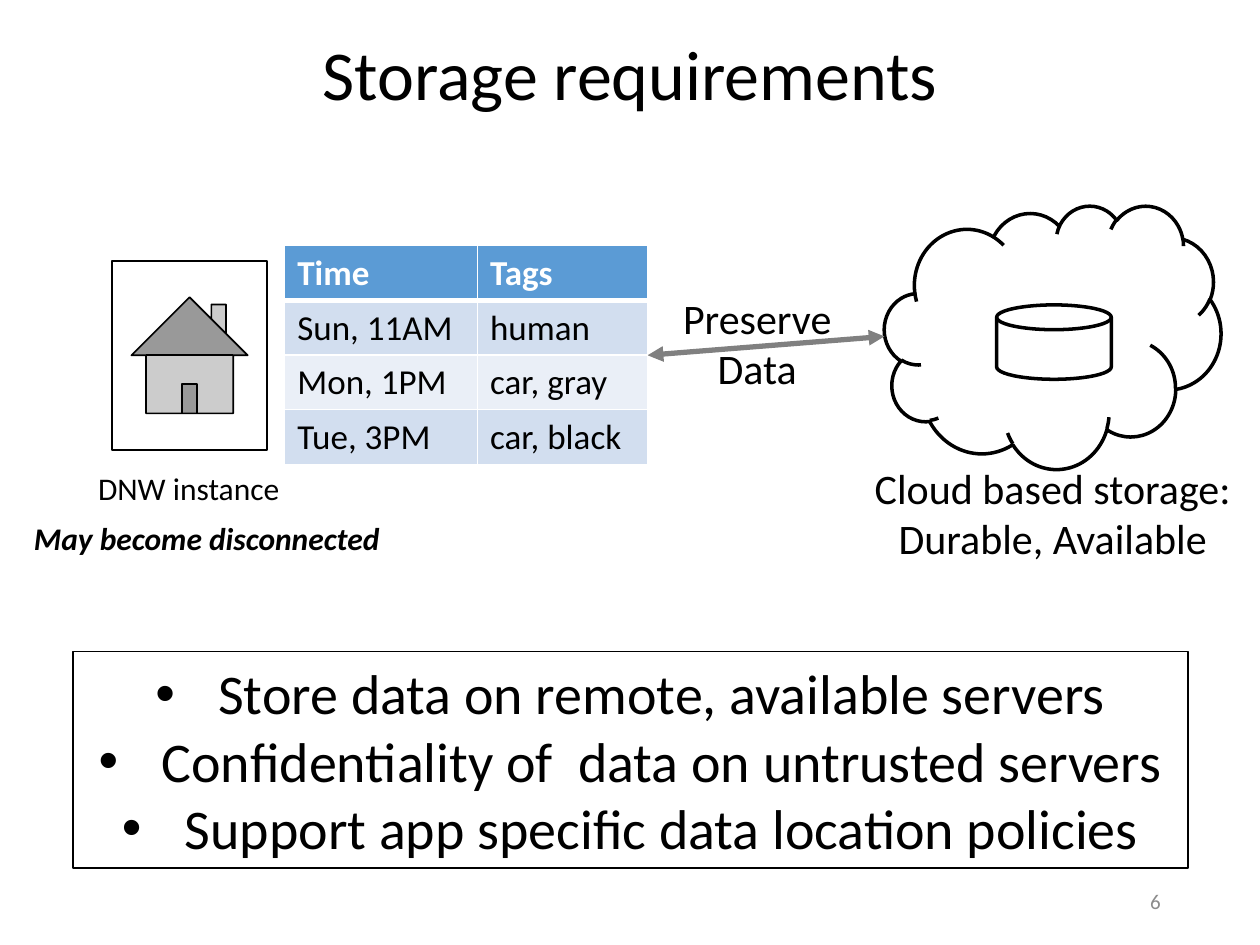
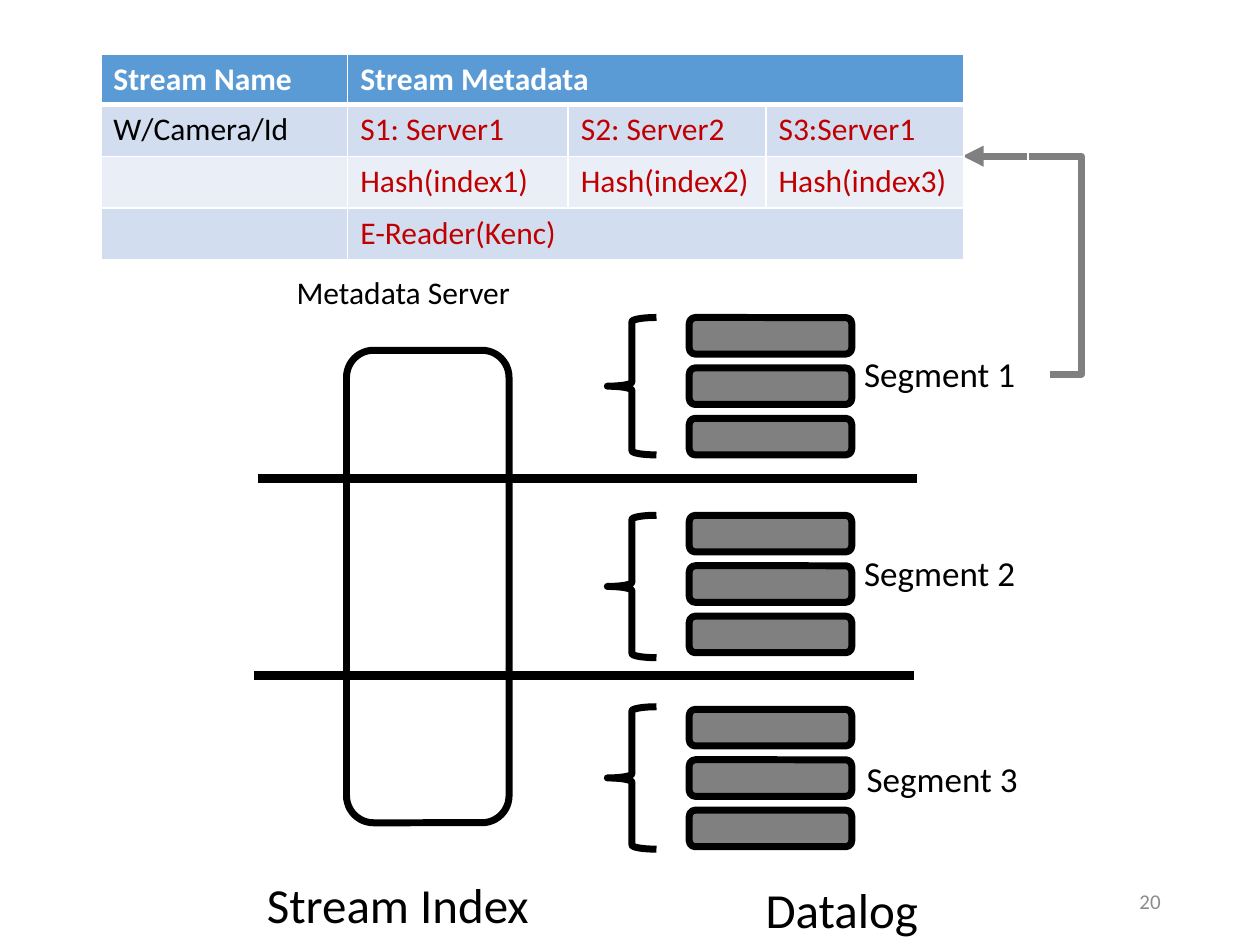
from dataclasses import dataclass

from lxml import etree
from pptx import Presentation
from pptx.dml.color import RGBColor
from pptx.enum.shapes import MSO_CONNECTOR, MSO_SHAPE
from pptx.enum.text import MSO_ANCHOR, MSO_AUTO_SIZE, PP_ALIGN
from pptx.oxml.ns import qn
from pptx.shapes.connector import Connector
from pptx.util import Inches, Pt

LEFT, CENTER, RIGHT = PP_ALIGN.LEFT, PP_ALIGN.CENTER, PP_ALIGN.RIGHT
TOP, MIDDLE = MSO_ANCHOR.TOP, MSO_ANCHOR.MIDDLE
STRAIGHT, ELBOW = MSO_CONNECTOR.STRAIGHT, MSO_CONNECTOR.ELBOW
HOME, CLOUD = MSO_SHAPE.ACTION_BUTTON_HOME, MSO_SHAPE.CLOUD
DISK, RECT = MSO_SHAPE.FLOWCHART_MAGNETIC_DISK, MSO_SHAPE.RECTANGLE
ROUNDED, BRACE = MSO_SHAPE.ROUNDED_RECTANGLE, MSO_SHAPE.LEFT_BRACE
GROW = MSO_AUTO_SIZE.SHAPE_TO_FIT_TEXT


@dataclass(frozen=True)
class Theme:
    font: str = "Calibri"
    black: str = "000000"
    white: str = "FFFFFF"
    gray: str = "808080"
    page_gray: str = "8C8C8C"
    red: str = "C00000"
    header: str = "5B9BD5"
    bands: tuple = ("D2DEEF", "EAEFF7")
    title: int = 40
    requirement: int = 32
    caption: int = 28
    label: int = 24
    body: int = 20
    small: int = 18
    page: int = 12


theme = Theme()


def write_text(frame, text, size=theme.small, color=theme.black, bold=False,
               italic=False, align=LEFT, anchor=TOP, spacing=None,
               bullet=None, grow=True):
    """Fill a text frame, one paragraph for each line of text."""
    frame.word_wrap = True
    frame.vertical_anchor = anchor
    if grow:
        frame.auto_size = GROW
    for number, line in enumerate(text.split("\n")):
        paragraph = frame.add_paragraph() if number else frame.paragraphs[0]
        paragraph.alignment = align
        if spacing:
            paragraph.line_spacing = spacing
        if bullet:
            properties = paragraph._p.get_or_add_pPr()
            properties.set("marL", str(Inches(0.5)))
            properties.set("indent", str(Inches(-0.5)))
            etree.SubElement(properties, qn("a:buFont")).set("typeface", "Arial")
            etree.SubElement(properties, qn("a:buChar")).set("char", bullet)
        run = paragraph.add_run()
        run.text = line
        font = run.font
        font.name, font.size = theme.font, Pt(size)
        font.bold, font.italic = bold, italic
        font.color.rgb = RGBColor.from_string(color)


def style(item, width, color=theme.black, fill=None, arrows=()):
    """Set outline, fill and arrowheads of a shape or connector, without shadow."""
    item.line.width = Pt(width)
    item.line.color.rgb = RGBColor.from_string(color)
    for end in arrows:
        etree.SubElement(item.line._get_or_add_ln(), qn(f"a:{end}")).set("type", "triangle")
    if isinstance(item, Connector):
        etree.SubElement(item._element.spPr, qn("a:effectLst"))
        return
    item.shadow.inherit = False
    if fill:
        item.fill.solid()
        item.fill.fore_color.rgb = RGBColor.from_string(fill)
    else:
        item.fill.background()


deck = Presentation()
deck.slide_width, deck.slide_height = Inches(10), Inches(7.5)
requirements = deck.slides.add_slide(deck.slide_layouts[6])
segments = deck.slides.add_slide(deck.slide_layouts[6])

# Storage requirements: house, cloud and the link between them
for kind, box, width, fill in [
    (HOME, (0.89, 2.07, 1.23, 1.5), 1, theme.white),
    (CLOUD, (7.02, 1.63, 2.67, 2.09), 2, None),
    (DISK, (7.91, 2.42, 0.91, 0.59), 2, None),
]:
    style(requirements.shapes.add_shape(kind, *map(Inches, box)), width, fill=fill)

preserve_link = requirements.shapes.add_connector(
    STRAIGHT, *map(Inches, (5.14, 2.82, 7.02, 2.67)))
style(preserve_link, 3, theme.gray, arrows=("headEnd", "tailEnd"))

requirement_list = requirements.shapes.add_shape(
    RECT, *map(Inches, (0.58, 5.17, 8.85, 1.72)))
style(requirement_list, 1, fill=theme.white)
write_text(requirement_list.text_frame,
           "Store data on remote, available servers\n"
           "Confidentiality of  data on untrusted servers\n"
           "Support app specific data location policies",
           size=theme.requirement, align=CENTER, anchor=MIDDLE, bullet="•")

# Stream index and the datalog segments
stream_index = segments.shapes.add_shape(ROUNDED, *map(Inches, (2.75, 2.78, 1.29, 3.75)))
style(stream_index, 4)

segment_labels = []
for number, (chunks_top, brace_top, brace_height, label_left, label_top) in enumerate([
    (2.52, 2.52, 1.09, 6.76, 2.75),
    (4.09, 4.09, 1.13, 6.76, 4.33),
    (5.63, 5.61, 1.13, 6.78, 5.96),
], start=1):
    for row in range(3):
        chunk = segments.shapes.add_shape(
            ROUNDED, *map(Inches, (5.47, chunks_top + 0.4 * row, 1.29, 0.29)))
        style(chunk, 4, fill=theme.gray)
    brace = segments.shapes.add_shape(
        BRACE, *map(Inches, (4.82, brace_top, 0.39, brace_height)))
    style(brace, 4)
    segment_labels.append((segments, (label_left, label_top, 1.56, 0.44),
                           f"Segment {number}", dict(size=theme.body)))

for left, top in [(2.05, 3.8), (2.02, 5.36)]:
    divider = segments.shapes.add_connector(
        STRAIGHT, *map(Inches, (left, top, left + 5.23, top)))
    style(divider, 5)

metadata_link = segments.shapes.add_connector(
    ELBOW, *map(Inches, (8.33, 2.97, 7.64, 1.24)))
style(metadata_link, 4, theme.gray, arrows=("tailEnd",))
bend = etree.SubElement(
    metadata_link._element.spPr.find(qn("a:prstGeom")).get_or_add_avLst(), qn("a:gd"))
bend.set("name", "adj1")
bend.set("fmla", "val -36600")

link_gap = segments.shapes.add_connector(STRAIGHT, *map(Inches, (8.16, 0.23, 8.16, 2.46)))
style(link_gap, 1, theme.white)

# Titles, labels and page numbers
page_box = (7.06, 6.95, 2.25, 0.4)
page_format = dict(size=theme.page, color=theme.page_gray, align=RIGHT,
                   anchor=MIDDLE, grow=False)
centered_label = dict(size=theme.label, align=CENTER)
for slide, box, text, text_format in segment_labels + [
    (requirements, (0.17, 0.27, 9.66, 1.45), "Storage requirements",
     dict(size=theme.title, align=CENTER, spacing=0.9, grow=False)),
    (requirements, (0.68, 3.67, 1.65, 0.4), "DNW instance", {}),
    (requirements, (0.17, 4.07, 3.05, 0.4), "May become disconnected",
     dict(bold=True, italic=True)),
    (requirements, (6.75, 3.62, 3.21, 0.91),
     "Cloud based storage: Durable, Available", centered_label),
    (requirements, (5.25, 2.27, 1.52, 0.91), "Preserve\nData", centered_label),
    (requirements, page_box, "6", page_format),
    (segments, (2.02, 6.89, 2.77, 0.57), "Stream Index", dict(size=theme.caption)),
    (segments, (5.52, 6.93, 2.32, 0.57), "Datalog",
     dict(size=theme.caption, align=CENTER)),
    (segments, (1.89, 2.12, 2.62, 0.4), "Metadata Server", dict(align=CENTER)),
    (segments, page_box, "20", page_format),
]:
    label = slide.shapes.add_textbox(*map(Inches, box))
    write_text(label.text_frame, text, **text_format)

# Tables: None marks a cell taken up by the one to its left
tag_rows = [
    ("Time", "Tags"),
    ("Sun, 11AM", "human"),
    ("Mon, 1PM", "car, gray"),
    ("Tue, 3PM", "car, black"),
]
stream_rows = [
    ("Stream Name", "Stream Metadata", None, None),
    ("W/Camera/Id", "S1: Server1", "S2: Server2", "S3:Server1"),
    ("", "Hash(index1)", "Hash(index2)", "Hash(index3)"),
    ("", "E-Reader(Kenc)", None, None),
]
for slide, left, top, widths, heights, rows, size, detail_color in [
    (requirements, 2.26, 1.95, (1.53, 1.35), (0.43,) * 4,
     tag_rows, theme.body, theme.black),
    (segments, 0.8, 0.43, (1.96, 1.75, 1.57, 1.57), (0.4, 0.41, 0.41, 0.41),
     stream_rows, theme.small, theme.red),
]:
    table = slide.shapes.add_table(
        len(rows), len(widths),
        *map(Inches, (left, top, sum(widths), sum(heights)))).table
    for column, width in zip(table.columns, widths):
        column.width = Inches(width)
    for r, (values, height) in enumerate(zip(rows, heights)):
        table.rows[r].height = Inches(height)
        for c, value in enumerate(values):
            cell = table.cell(r, c)
            for side in ("lnL", "lnR", "lnT", "lnB"):
                below_header = (r, side) in ((0, "lnB"), (1, "lnT"))
                border = etree.SubElement(cell._tc.get_or_add_tcPr(), qn(f"a:{side}"))
                border.set("w", str(Pt(3 if below_header else 1)))
                paint = etree.SubElement(border, qn("a:solidFill"))
                etree.SubElement(paint, qn("a:srgbClr")).set("val", theme.white)
            cell.fill.solid()
            cell.fill.fore_color.rgb = RGBColor.from_string(
                theme.bands[(r - 1) % 2] if r else theme.header)
            if value:
                body_color = detail_color if c else theme.black
                write_text(cell.text_frame, value, size=size, bold=r == 0,
                           color=body_color if r else theme.white, grow=False)
        if None in values:
            table.cell(r, 1).merge(table.cell(r, len(values) - 1))

deck.save("out.pptx")
